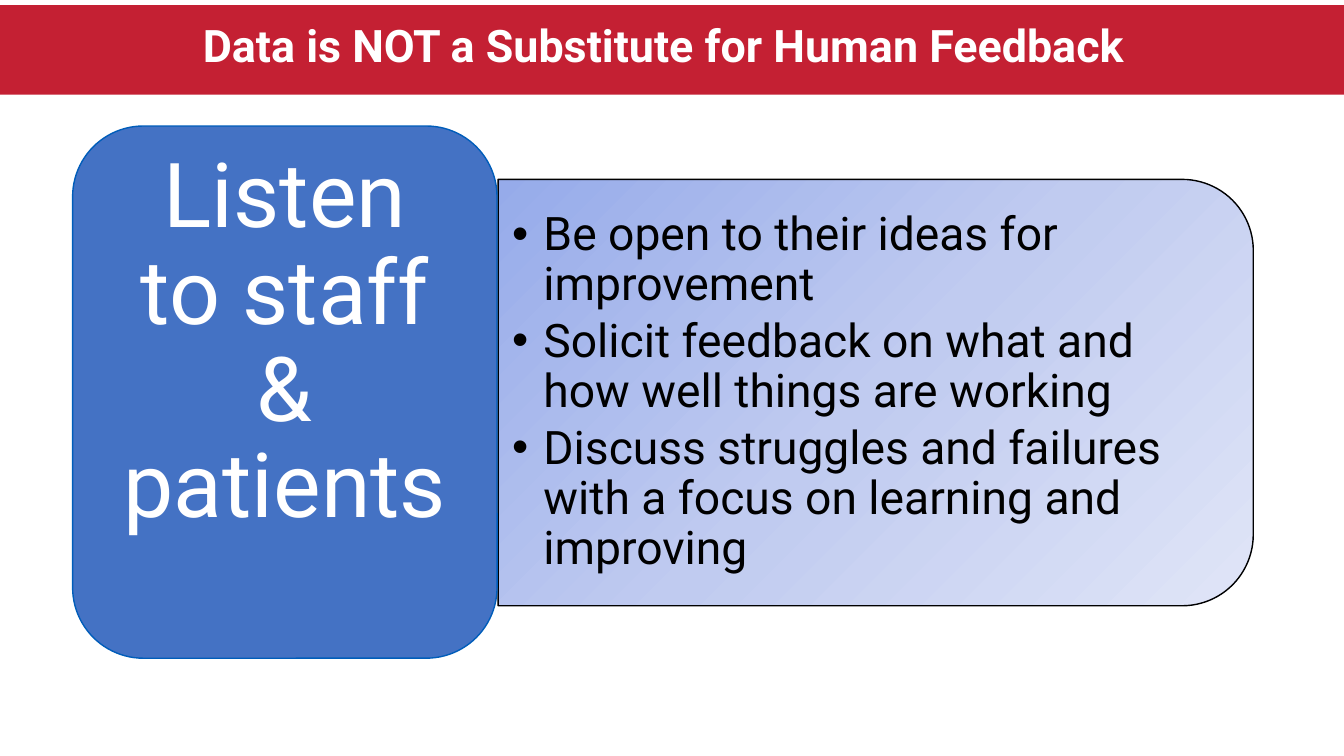
from lxml import etree
from pptx import Presentation
from pptx.dml.color import RGBColor
from pptx.enum.shapes import MSO_SHAPE
from pptx.enum.text import MSO_ANCHOR, PP_ALIGN
from pptx.oxml import parse_xml
from pptx.oxml.ns import qn
from pptx.util import Inches, Pt

RECT = MSO_SHAPE.RECTANGLE
ROUND = MSO_SHAPE.ROUNDED_RECTANGLE
TAB = MSO_SHAPE.ROUND_2_SAME_RECTANGLE
MIDDLE = MSO_ANCHOR.MIDDLE
CENTER, LEFT = PP_ALIGN.CENTER, PP_ALIGN.LEFT

FONT = "Roboto"
COLORS = {
    "red": "C42033", "blue": "4472C4", "edge": "005DBA",
    "white": "FFFFFF", "black": "000000",
}
FADE = {0: "96ABEA", 50: "C0CBF0", 100: "E0E5F7"}
TITLE = "Data is NOT a Substitute for Human Feedback"
LEAD = "Listen to staff & patients"
POINTS = [
    "Be open to their ideas for improvement",
    "Solicit feedback on what and how well things are working",
    "Discuss struggles and failures with a focus on learning and improving",
]


def color(name):
    """Return the named colour."""
    return RGBColor.from_string(COLORS[name])


def place(shape, box):
    """Set a shape's left, top, width and height in inches."""
    shape.left, shape.top, shape.width, shape.height = map(Inches, box)


def add_block(slide, kind, box, fill=None, line=None):
    """Add a preset shape with a plain fill and an optional outline."""
    shape = slide.shapes.add_shape(kind, *map(Inches, box))
    shape.shadow.inherit = False
    if fill:
        shape.fill.solid()
        shape.fill.fore_color.rgb = color(fill)
    if line:
        shape.line.color.rgb = color(line)
        shape.line.width = Pt(1)
    else:
        shape.line.fill.background()
    return shape


def add_fade(shape, stops, angle):
    """Fill a shape with a linear gradient that ignores its rotation."""
    marks = "".join(
        f'<a:gs pos="{spot * 1000}"><a:srgbClr val="{tint}"/></a:gs>'
        for spot, tint in stops.items())
    grad = parse_xml(
        '<a:gradFill xmlns:a="http://schemas.openxmlformats.org/drawingml/2006/main"'
        f' rotWithShape="0"><a:gsLst>{marks}</a:gsLst>'
        f'<a:lin ang="{angle * 60000}" scaled="0"/></a:gradFill>')
    shape.element.spPr.find(qn("a:prstGeom")).addnext(grad)


def add_bullet(para, indent):
    """Give a paragraph a hanging round bullet."""
    props = para._p.get_or_add_pPr()
    props.set("marL", str(Inches(indent)))
    props.set("indent", str(-Inches(indent)))
    etree.SubElement(props, qn("a:buFont")).set("typeface", "Arial")
    etree.SubElement(props, qn("a:buChar")).set("char", "•")


def write(shape, lines, size=32, tint="black", bold=False, align=LEFT,
          inset=(0.1, 0.05, 0.1, 0.05), after=0, indent=0):
    """Write paragraphs into a shape with one format."""
    frame = shape.text_frame
    frame.word_wrap = True
    frame.vertical_anchor = MIDDLE
    (frame.margin_left, frame.margin_top,
     frame.margin_right, frame.margin_bottom) = map(Inches, inset)
    for i, line in enumerate(lines):
        para = frame.add_paragraph() if i else frame.paragraphs[0]
        para.alignment = align
        para.line_spacing = 0.9
        para.space_before = Pt(0)
        para.space_after = Pt(after)
        if indent:
            add_bullet(para, indent)
        run = para.add_run()
        run.text = line
        run.font.name = FONT
        run.font.size = Pt(size)
        run.font.bold = bold
        run.font.color.rgb = color(tint)


def add_title(slide):
    """Set the slide title on its red band."""
    band = add_block(slide, RECT, (0, 0.05, 13.33, 0.89), fill="red")
    title = slide.shapes.title
    title.element.addprevious(band.element)
    place(title, (1.5, 0, 10.17, 0.95))
    write(title, [TITLE], tint="white", bold=True, align=CENTER)


def add_points(slide):
    """Add the sideways panel and its bullet list."""
    panel = add_block(slide, TAB, (6.57, 0.15, 4.23, 7.49), line="black")
    panel.rotation = 90
    add_fade(panel, FADE, 45)
    area = slide.shapes.add_textbox(*map(Inches, (4.94, 1.99, 7.29, 3.81)))
    write(area, POINTS, size=33, after=5, indent=0.31,
          inset=(0.14, 0.07, 0.14, 0.07))


def add_lead(slide):
    """Add the blue card with the main message."""
    card = add_block(slide, ROUND, (0.72, 1.25, 4.21, 5.28),
                     fill="blue", line="edge")
    write(card, [LEAD], size=64, tint="white", align=CENTER,
          inset=(0.27, 0.13, 0.27, 1.09))


def main():
    """Build and save the slide."""
    deck = Presentation()
    deck.slide_width, deck.slide_height = Inches(13.33), Inches(7.5)
    slide = deck.slides.add_slide(deck.slide_layouts[5])
    add_title(slide)
    add_points(slide)
    add_lead(slide)
    deck.save("out.pptx")


if __name__ == "__main__":
    main()
